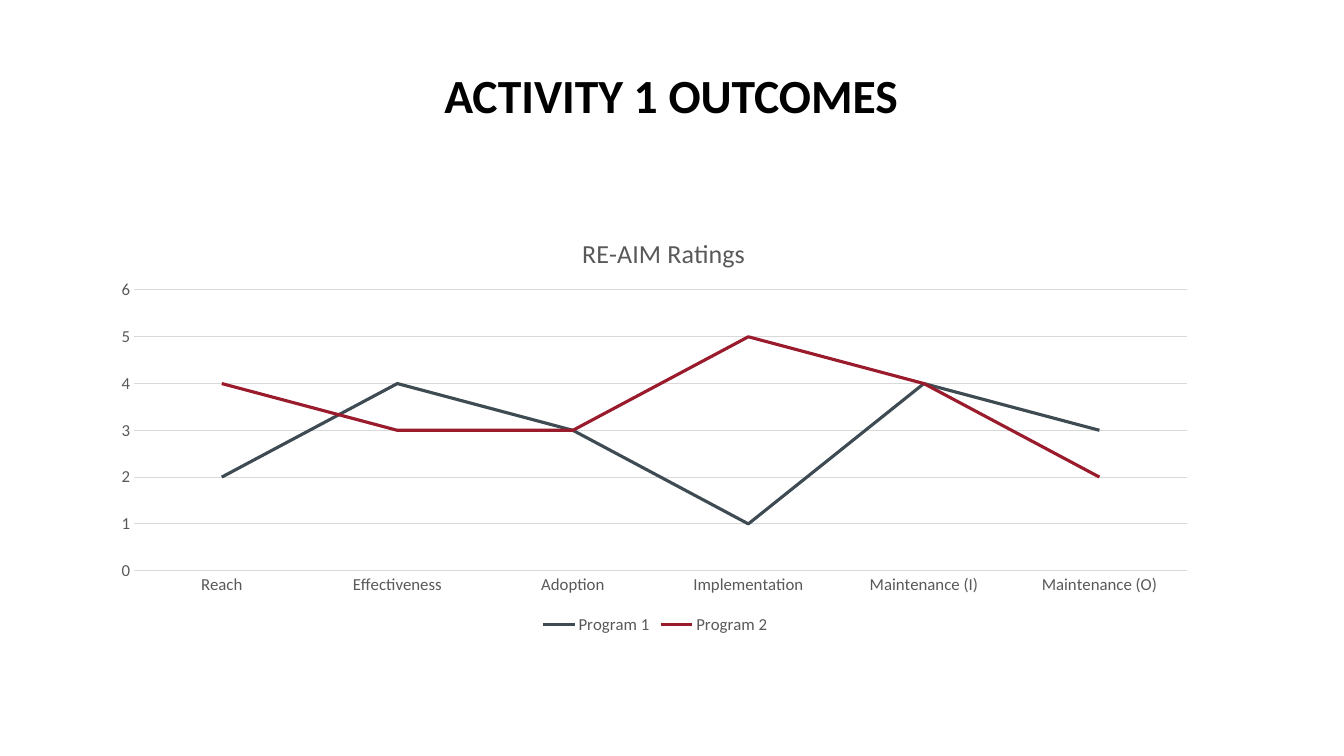
from lxml import etree
from pptx import Presentation
from pptx.chart.data import CategoryChartData
from pptx.dml.color import RGBColor
from pptx.enum.chart import XL_CHART_TYPE, XL_LEGEND_POSITION, XL_MARKER_STYLE, XL_TICK_MARK
from pptx.enum.text import MSO_ANCHOR, PP_ALIGN
from pptx.oxml.ns import qn
from pptx.util import Cm, Pt

LINE_CHART = XL_CHART_TYPE.LINE
LEGEND_BOTTOM = XL_LEGEND_POSITION.BOTTOM
NO_MARKER = XL_MARKER_STYLE.NONE
NO_TICK = XL_TICK_MARK.NONE
ANCHOR_TOP = MSO_ANCHOR.TOP
CENTER = PP_ALIGN.CENTER

FONT = "Calibri"
BLACK, GRAY, LIGHT_GRAY = "000000", "595959", "D9D9D9"

CATEGORIES = ["Reach", "Effectiveness", "Adoption", "Implementation",
              "Maintenance (I)", "Maintenance (O)"]
PROGRAMS = [
    ("Program 1", [2, 4, 3, 1, 4, 3], "3E4B52"),
    ("Program 2", [4, 3, 3, 5, 4, 2], "991B2C"),
]


def rgb(color):
    return RGBColor.from_string(color)


def style_font(font, size, color, bold=False):
    font.name = FONT
    font.size = Pt(size)
    font.bold = bold
    font.color.rgb = rgb(color)


def style_line(line, color, width):
    line.color.rgb = rgb(color)
    line.width = Pt(width)


def set_layout(parent, **fractions):
    """Place a chart part by x, y, w and h as fractions of the chart."""
    layout = parent.find(qn("c:layout"))
    if layout is None:
        layout = etree.Element(qn("c:layout"))
        text = parent.find(qn("c:tx"))
        parent.insert(0 if text is None else parent.index(text) + 1, layout)
    for child in list(layout):
        layout.remove(child)
    manual = etree.SubElement(layout, qn("c:manualLayout"))
    if "w" in fractions:
        etree.SubElement(manual, qn("c:layoutTarget")).set("val", "inner")
    for side in "xy":
        etree.SubElement(manual, qn(f"c:{side}Mode")).set("val", "edge")
    for name, fraction in fractions.items():
        etree.SubElement(manual, qn(f"c:{name}")).set("val", str(fraction))


def add_heading(page, text):
    box = page.shapes.add_textbox(Cm(2.54), Cm(1.7), Cm(28.75), Cm(3.68))
    frame = box.text_frame
    frame.word_wrap = True
    frame.vertical_anchor = ANCHOR_TOP
    frame.text = text
    para = frame.paragraphs[0]
    para.alignment = CENTER
    para.line_spacing = 0.9
    style_font(para.runs[0].font, 34, BLACK, bold=True)


def style_axes(chart):
    for axis in (chart.category_axis, chart.value_axis):
        axis.major_tick_mark = axis.minor_tick_mark = NO_TICK
        style_font(axis.tick_labels.font, 12, GRAY)
    style_line(chart.category_axis.format.line, LIGHT_GRAY, 0.75)
    values = chart.value_axis
    values.minimum_scale, values.maximum_scale, values.major_unit = 0, 6, 1
    values.format.line.fill.background()
    style_line(values.major_gridlines.format.line, LIGHT_GRAY, 0.75)


def add_ratings_chart(page, title):
    data = CategoryChartData(number_format="General")
    data.categories = CATEGORIES
    for name, ratings, _ in PROGRAMS:
        data.add_series(name, ratings)
    chart = page.shapes.add_chart(
        LINE_CHART, Cm(2.54), Cm(5.38), Cm(27.94), Cm(10.72), data).chart
    style_font(chart.font, 10, BLACK)

    chart.has_title = True
    frame = chart.chart_title.text_frame
    frame.text = title
    style_font(frame.paragraphs[0].runs[0].font, 18.6, GRAY)
    chart.chart_title.include_in_layout = False

    chart.has_legend = True
    chart.legend.position = LEGEND_BOTTOM
    chart.legend.include_in_layout = False
    style_font(chart.legend.font, 12, GRAY)

    style_axes(chart)
    plot = chart.plots[0]
    plot.vary_by_categories = False
    for series, (_, _, color) in zip(plot.series, PROGRAMS):
        series.smooth = False
        series.marker.style = NO_MARKER
        style_line(series.format.line, color, 2.25)

    chart_space = chart.element
    set_layout(chart_space.find(f".//{qn('c:title')}"), x=0.43, y=0.04)
    set_layout(chart_space.find(f".//{qn('c:plotArea')}"),
               x=0.03, y=0.18, w=0.95, h=0.66)


def main():
    deck = Presentation()
    deck.slide_width, deck.slide_height = Cm(33.87), Cm(19.05)
    page = deck.slides.add_slide(deck.slide_layouts[6])
    add_heading(page, "ACTIVITY 1 OUTCOMES")
    add_ratings_chart(page, "RE-AIM Ratings")
    deck.save("out.pptx")


if __name__ == "__main__":
    main()
